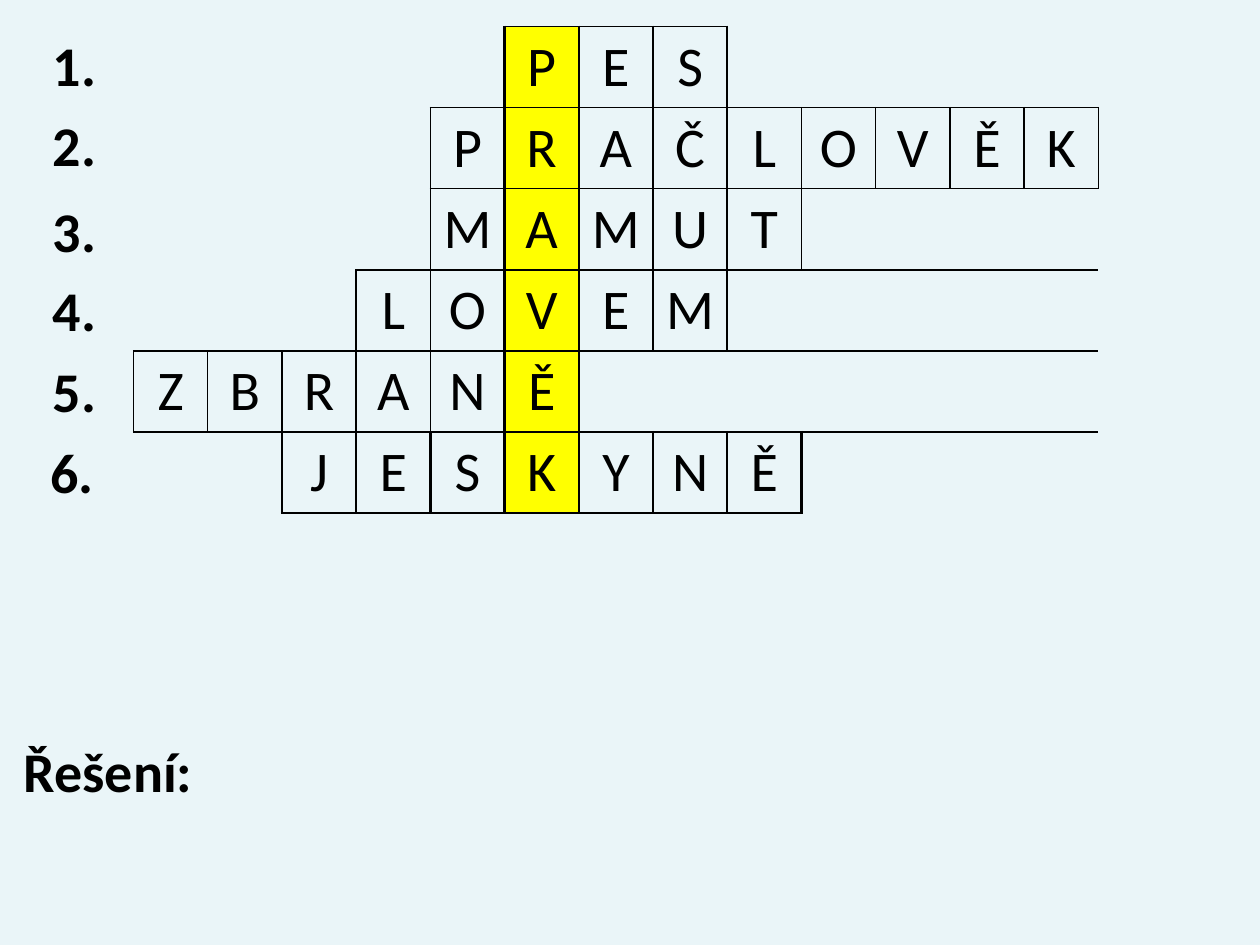
from lxml import etree
from pptx import Presentation
from pptx.dml.color import RGBColor
from pptx.enum.text import MSO_AUTO_SIZE, PP_ALIGN
from pptx.oxml.ns import qn
from pptx.util import Inches, Pt

CENTER = PP_ALIGN.CENTER
GROW = MSO_AUTO_SIZE.SHAPE_TO_FIT_TEXT

THEME = {
    "font": "Calibri",
    "size": 32,
    "text": "000000",
    "background": "EAF5F8",
    "key": "FFFF00",
    "thin": 1,
    "thick": 1.5,
    "grid_style": "{2D5ABB26-0587-4C30-8999-92F81FD0307C}",
}

COLUMNS = 13
KEY_COLUMN = 5
ANSWERS = [
    ("PES", 5),
    ("PRAČLOVĚK", 4),
    ("MAMUT", 4),
    ("LOVEM", 3),
    ("ZBRANĚ", 0),
    ("JESKYNĚ", 2),
]
LAST_ROW = len(ANSWERS) - 1
ROWS_RULED_TO_EDGE = (3, 4)
LABELS = [
    ("1.", 0.32, 0.19, 0.55),
    ("2.", 0.32, 0.83, 0.55),
    ("3.", 0.32, 1.51, 0.55),
    ("4.", 0.32, 2.14, 0.55),
    ("5.", 0.32, 2.78, 0.55),
    ("6.", 0.3, 3.42, 0.55),
    ("Řešení:", 0.09, 5.8, 1.55),
]


def style_text(paragraph, bold=False):
    for run in paragraph.runs:
        run.font.name = THEME["font"]
        run.font.size = Pt(THEME["size"])
        run.font.bold = bold
        run.font.color.rgb = RGBColor.from_string(THEME["text"])


def set_borders(cell, widths):
    properties = cell._tc.get_or_add_tcPr()
    for side in "LRTB":
        if side in widths:
            line = etree.SubElement(properties, qn(f"a:ln{side}"), w=str(Pt(widths[side])))
            fill = etree.SubElement(line, qn("a:solidFill"))
            etree.SubElement(fill, qn("a:srgbClr"), val=THEME["text"])


def letter_borders(row, column):
    thin, thick = THEME["thin"], THEME["thick"]
    widths = dict.fromkeys("LRTB", thin)
    if row == LAST_ROW:
        widths.update(L=thick, R=thick)
        if column != KEY_COLUMN:
            widths["B"] = thick
        if column >= KEY_COLUMN:
            widths["T"] = thick
    if column in (KEY_COLUMN, KEY_COLUMN + 1):
        widths["L"] = thick
    if column in (KEY_COLUMN, KEY_COLUMN - 1):
        widths["R"] = thick
    if row == LAST_ROW - 1 and column == KEY_COLUMN:
        widths["B"] = thick
    return widths


def fill_letter(cell, letter, row, column):
    set_borders(cell, letter_borders(row, column))
    if column == KEY_COLUMN:
        cell.fill.solid()
        cell.fill.fore_color.rgb = RGBColor.from_string(THEME["key"])
    else:
        cell.fill.background()
    paragraph = cell.text_frame.paragraphs[0]
    paragraph.text = letter
    paragraph.alignment = CENTER
    style_text(paragraph)


def fill_blank(table, row, first, last, ruled):
    if first > last:
        return
    for column in range(first, last + 1):
        cell = table.cell(row, column)
        set_borders(cell, {"T": THEME["thin"]} if ruled else {})
        cell.fill.background()
    if first < last:
        table.cell(row, first).merge(table.cell(row, last))


def add_crossword(slide):
    frame = slide.shapes.add_table(
        len(ANSWERS), COLUMNS, Inches(1.06), Inches(0.21), Inches(7.66), Inches(3.8)
    )
    table = frame.table
    table.first_row = False
    table.horz_banding = False
    table._tbl.tblPr.find(qn("a:tableStyleId")).text = THEME["grid_style"]
    for table_row in table.rows:
        table_row.height = Inches(0.55)
    frame.height = Inches(3.8)
    for row, (word, start) in enumerate(ANSWERS):
        end = start + len(word)
        for column, letter in enumerate(word, start):
            fill_letter(table.cell(row, column), letter, row, column)
        fill_blank(table, row, 0, start - 1, False)
        fill_blank(table, row, end, COLUMNS - 1, row in ROWS_RULED_TO_EDGE)


def add_label(slide, text, left, top, width):
    label = slide.shapes.add_textbox(Inches(left), Inches(top), Inches(width), Inches(0.64))
    label.text_frame.text = text
    label.text_frame.word_wrap = False
    label.text_frame.auto_size = GROW
    style_text(label.text_frame.paragraphs[0], bold=True)


def main():
    presentation = Presentation()
    presentation.slide_width = Inches(10)
    presentation.slide_height = Inches(7.5)
    slide = presentation.slides.add_slide(presentation.slide_layouts[6])
    slide.background.fill.solid()
    slide.background.fill.fore_color.rgb = RGBColor.from_string(THEME["background"])
    add_crossword(slide)
    for label in LABELS:
        add_label(slide, *label)
    presentation.save("out.pptx")


if __name__ == "__main__":
    main()
